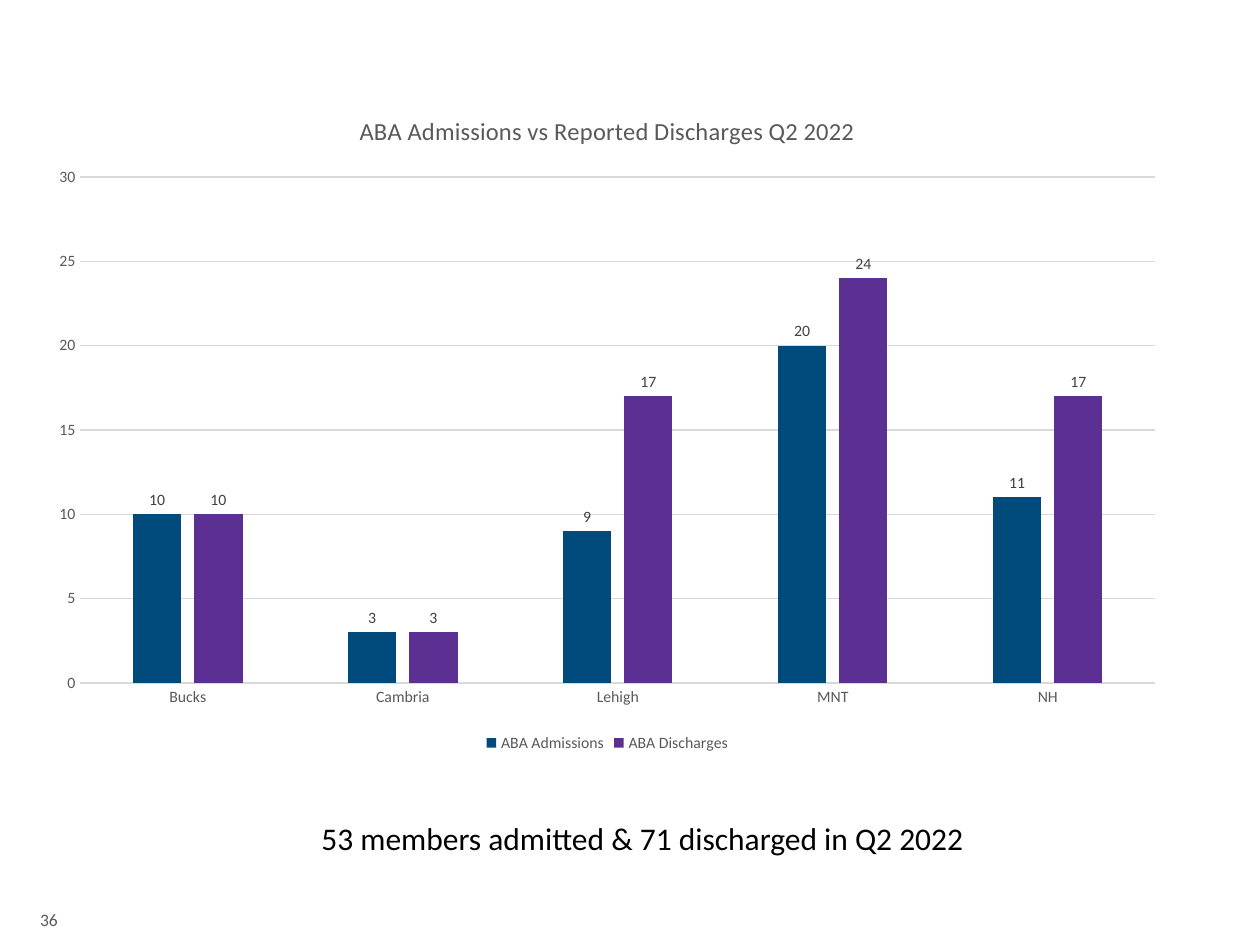
from pptx import Presentation
from pptx.chart.data import CategoryChartData
from pptx.dml.color import RGBColor
from pptx.enum.chart import XL_CHART_TYPE as ChartType, XL_LABEL_POSITION as LabelPosition
from pptx.enum.chart import XL_LEGEND_POSITION as LegendPosition, XL_TICK_MARK as TickMark
from pptx.enum.text import MSO_ANCHOR as Anchor, PP_ALIGN as Align
from pptx.util import Inches, Pt

FONT = "Calibri"
COLORS = {"text": "000000", "muted": "595959", "label": "404040", "grid": "D9D9D9",
          "admissions": "004A7C", "discharges": "5C2F92"}
TITLE = "ABA Admissions vs Reported Discharges Q2 2022"
COUNTIES = ["Bucks", "Cambria", "Lehigh", "MNT", "NH"]
SERIES = [
    ("ABA Admissions", [10, 3, 9, 20, 11], "admissions"),
    ("ABA Discharges", [10, 3, 17, 24, 17], "discharges"),
]
CHART_BOX = (0.29, 0.71, 9.06, 5.3)
TEXTS = [
    ("36", (0.22, 7.03, 0.44, 0.4), 10, "muted", Align.LEFT, Anchor.BOTTOM, 6),
    ("53 members admitted & 71 discharged in Q2 2022",
     (1.86, 6.45, 6.48, 0.4), 18, "text", Align.CENTER, Anchor.TOP, 0),
]


def color(name):
    return RGBColor.from_string(COLORS[name])


def style_font(font, size, color_name):
    font.name = FONT
    font.size = Pt(size)
    font.bold = False
    font.color.rgb = color(color_name)


def style_line(line):
    line.color.rgb = color("grid")
    line.width = Pt(0.75)


def add_text(slide, text, box, size, color_name, align, anchor, space_after):
    frame = slide.shapes.add_textbox(*map(Inches, box)).text_frame
    frame.word_wrap = True
    frame.vertical_anchor = anchor
    paragraph = frame.paragraphs[0]
    paragraph.alignment = align
    paragraph.space_after = Pt(space_after)
    run = paragraph.add_run()
    run.text = text
    style_font(run.font, size, color_name)


def add_column_chart(slide):
    data = CategoryChartData()
    data.categories = COUNTIES
    for name, values, _ in SERIES:
        data.add_series(name, values)
    chart = slide.shapes.add_chart(
        ChartType.COLUMN_CLUSTERED, *map(Inches, CHART_BOX), data).chart
    style_font(chart.font, 10, "text")

    chart.has_title = True
    run = chart.chart_title.text_frame.paragraphs[0].add_run()
    run.text = TITLE
    style_font(run.font, 14, "muted")
    chart.chart_title.include_in_layout = False

    chart.has_legend = True
    chart.legend.position = LegendPosition.BOTTOM
    chart.legend.include_in_layout = False
    style_font(chart.legend.font, 9, "muted")

    for axis in (chart.category_axis, chart.value_axis):
        axis.major_tick_mark = axis.minor_tick_mark = TickMark.NONE
        style_font(axis.tick_labels.font, 9, "muted")
    style_line(chart.category_axis.format.line)
    values_axis = chart.value_axis
    values_axis.format.line.fill.background()
    values_axis.minimum_scale, values_axis.maximum_scale, values_axis.major_unit = 0, 30, 5
    style_line(values_axis.major_gridlines.format.line)

    plot = chart.plots[0]
    plot.gap_width = 219
    plot.overlap = -27
    plot.vary_by_categories = False
    for series, (_, _, color_name) in zip(plot.series, SERIES):
        series.format.fill.solid()
        series.format.fill.fore_color.rgb = color(color_name)
        labels = series.data_labels
        labels.show_value = True
        labels.position = LabelPosition.OUTSIDE_END
        style_font(labels.font, 9, "label")


def main():
    presentation = Presentation()
    presentation.slide_width = Inches(10)
    presentation.slide_height = Inches(7.5)
    slide = presentation.slides.add_slide(presentation.slide_layouts[6])
    add_column_chart(slide)
    for item in TEXTS:
        add_text(slide, *item)
    presentation.save("out.pptx")


if __name__ == "__main__":
    main()
